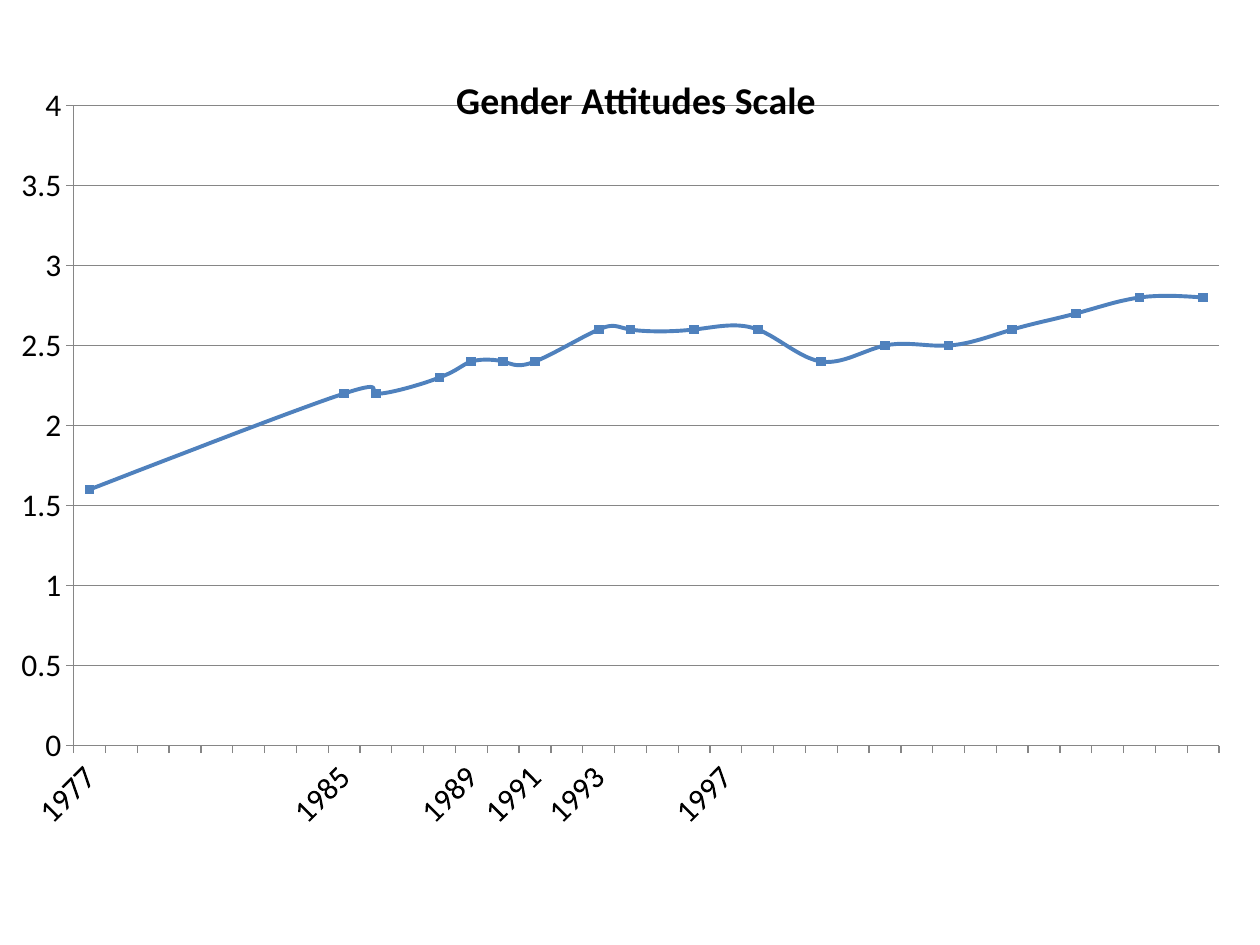
from lxml import etree
from pptx import Presentation
from pptx.chart.data import CategoryChartData
from pptx.dml.color import RGBColor
from pptx.enum.chart import XL_CHART_TYPE as ChartType, XL_MARKER_STYLE as Marker
from pptx.enum.chart import XL_TICK_MARK as Tick
from pptx.oxml.ns import qn
from pptx.util import Inches, Pt

BLUE, GREY, BLACK = "4F81BD", "868686", "000000"
FIRST_YEAR, LAST_YEAR = 1977, 2012
SCORES = {
    1977: 1.6, 1985: 2.2, 1986: 2.2, 1988: 2.3, 1989: 2.4, 1990: 2.4,
    1991: 2.4, 1993: 2.6, 1994: 2.6, 1996: 2.6, 1998: 2.6, 2000: 2.4,
    2002: 2.5, 2004: 2.5, 2006: 2.6, 2008: 2.7, 2010: 2.8, 2012: 2.8,
}
LABELLED = {*SCORES, 1997}


def rgb(color):
    return RGBColor.from_string(color)


def format_font(font, size=18, color=BLACK, bold=False):
    font.name = "Calibri"
    font.size = Pt(size)
    font.bold = bold
    font.color.rgb = rgb(color)


def add_text(tf, text, **fmt):
    r = tf.paragraphs[0].add_run()
    r.text = text
    format_font(r.font, **fmt)


def format_line(line, color=GREY, width=0.75):
    line.color.rgb = rgb(color)
    line.width = Pt(width)


def set_layout(parent, after, **values):
    """Place a chart part by fractions of the chart area."""
    for old in parent.findall(qn("c:layout")):
        parent.remove(old)
    layout = etree.Element(qn("c:layout"))
    manual = etree.SubElement(layout, qn("c:manualLayout"))
    for name, value in values.items():
        etree.SubElement(manual, qn(f"c:{name}")).set("val", str(value))
    if after is None:
        parent.insert(0, layout)
    else:
        after.addnext(layout)


def format_axis(axis):
    axis.major_tick_mark = Tick.OUTSIDE
    axis.minor_tick_mark = Tick.NONE
    format_line(axis.format.line)
    format_font(axis.tick_labels.font)


def format_series(series):
    series.smooth = True
    format_line(series.format.line, BLUE, 2.25)
    marker = series.marker
    marker.style = Marker.SQUARE
    marker.size = 5
    marker.format.fill.solid()
    marker.format.fill.fore_color.rgb = rgb(BLUE)
    format_line(marker.format.line, BLUE)


def add_attitudes_chart(slide, left, top, width, height):
    years = range(FIRST_YEAR, LAST_YEAR + 1)
    data = CategoryChartData()
    data.categories = [str(y) if y in LABELLED else "" for y in years]
    data.add_series("Series 1", [SCORES.get(y) for y in years])
    chart = slide.shapes.add_chart(
        ChartType.LINE_MARKERS, left, top, width, height, data).chart
    format_font(chart.font)
    chart.has_legend = False

    chart.has_title = True
    title = chart.chart_title
    add_text(title.text_frame, "Gender Attitudes Scale", size=21.6, bold=True)
    title.include_in_layout = True
    set_layout(title._element, title._element.find(qn("c:tx")),
               xMode="edge", yMode="edge", x=0.35, y=0.04)

    plot = chart.plots[0]
    plot.vary_by_categories = False
    format_series(plot.series[0])
    plot_area = chart._chartSpace.chart.plotArea
    set_layout(plot_area, None, layoutTarget="inner", xMode="edge",
               yMode="edge", x=0.041, y=0.086, w=0.942, h=0.744)

    format_axis(chart.category_axis)
    body = chart.category_axis._element.find(qn("c:txPr")).find(qn("a:bodyPr"))
    body.set("rot", str(-45 * 60000))

    scale = chart.value_axis
    format_axis(scale)
    scale.minimum_scale, scale.maximum_scale = 0, 4
    scale.major_unit = 0.5
    scale.has_major_gridlines = True
    format_line(scale.major_gridlines.format.line)
    scale.tick_labels.number_format = "General"
    scale.tick_labels.number_format_is_linked = False

    blanks = chart._chartSpace.chart.find(qn("c:dispBlanksAs"))
    blanks.set("val", "span")


def main():
    prs = Presentation()
    prs.slide_width, prs.slide_height = Inches(10), Inches(7.5)
    slide = prs.slides.add_slide(prs.slide_layouts[6])
    add_attitudes_chart(slide, Inches(0.17), Inches(0.25),
                        Inches(9.67), Inches(6.83))
    prs.save("out.pptx")


if __name__ == "__main__":
    main()
